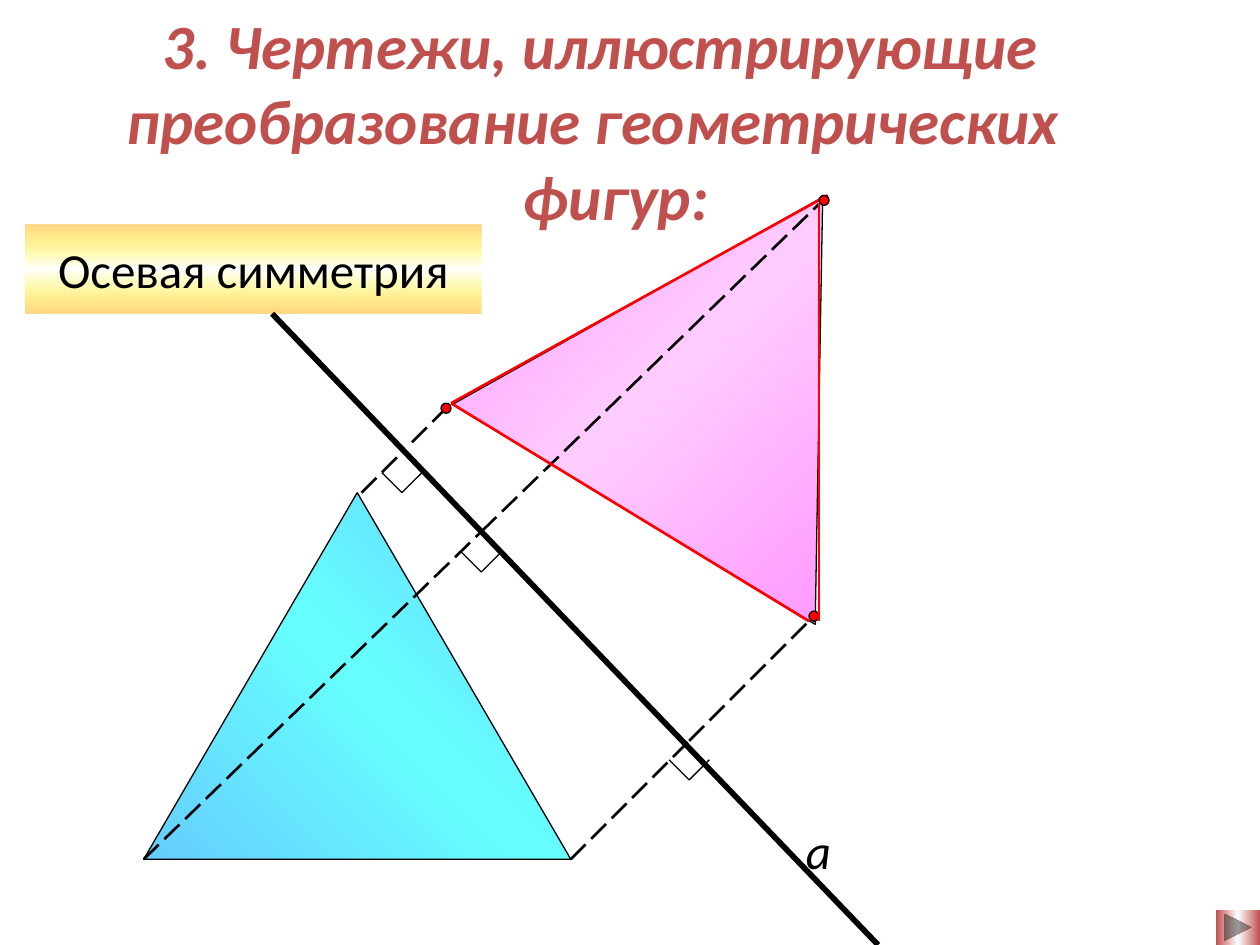
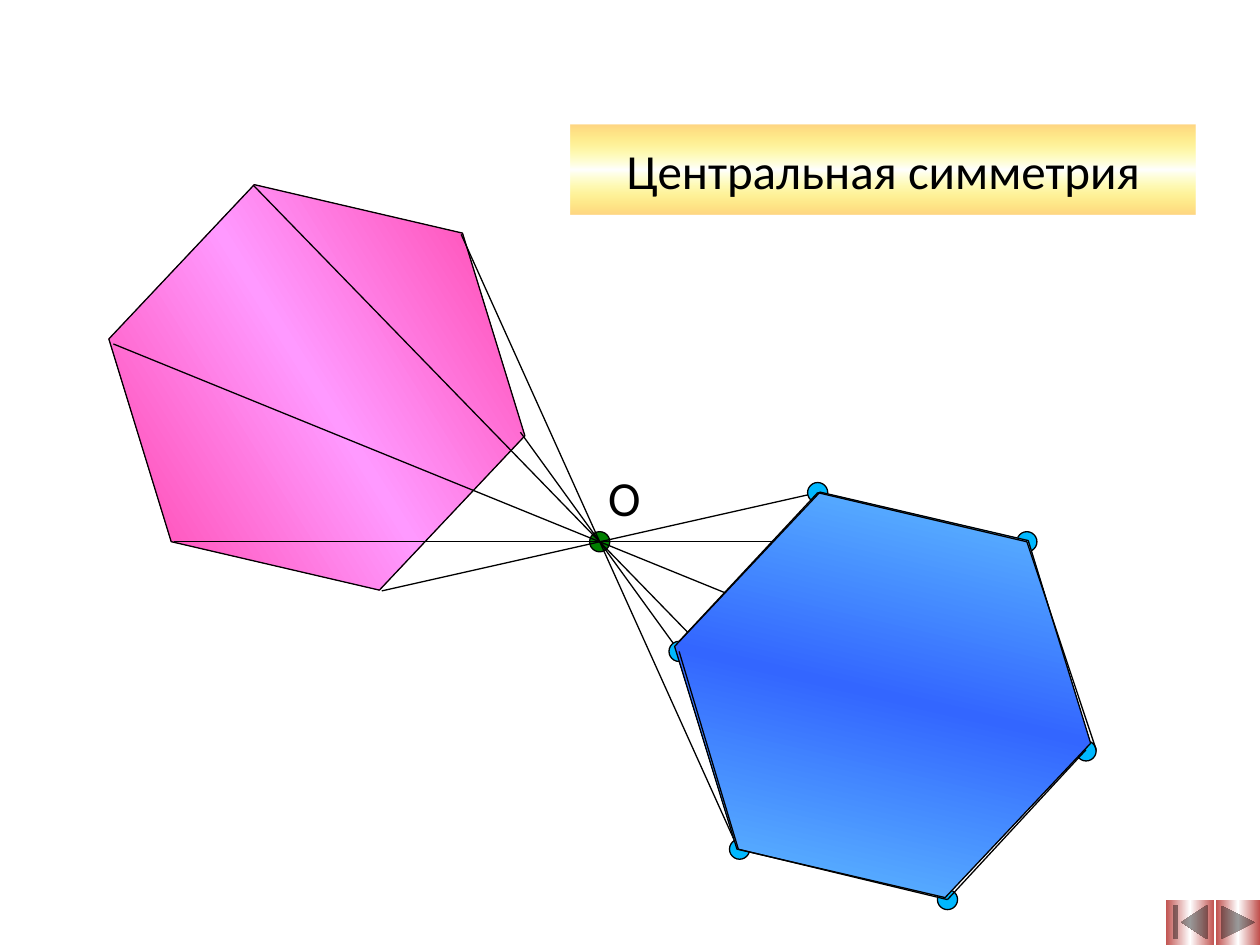
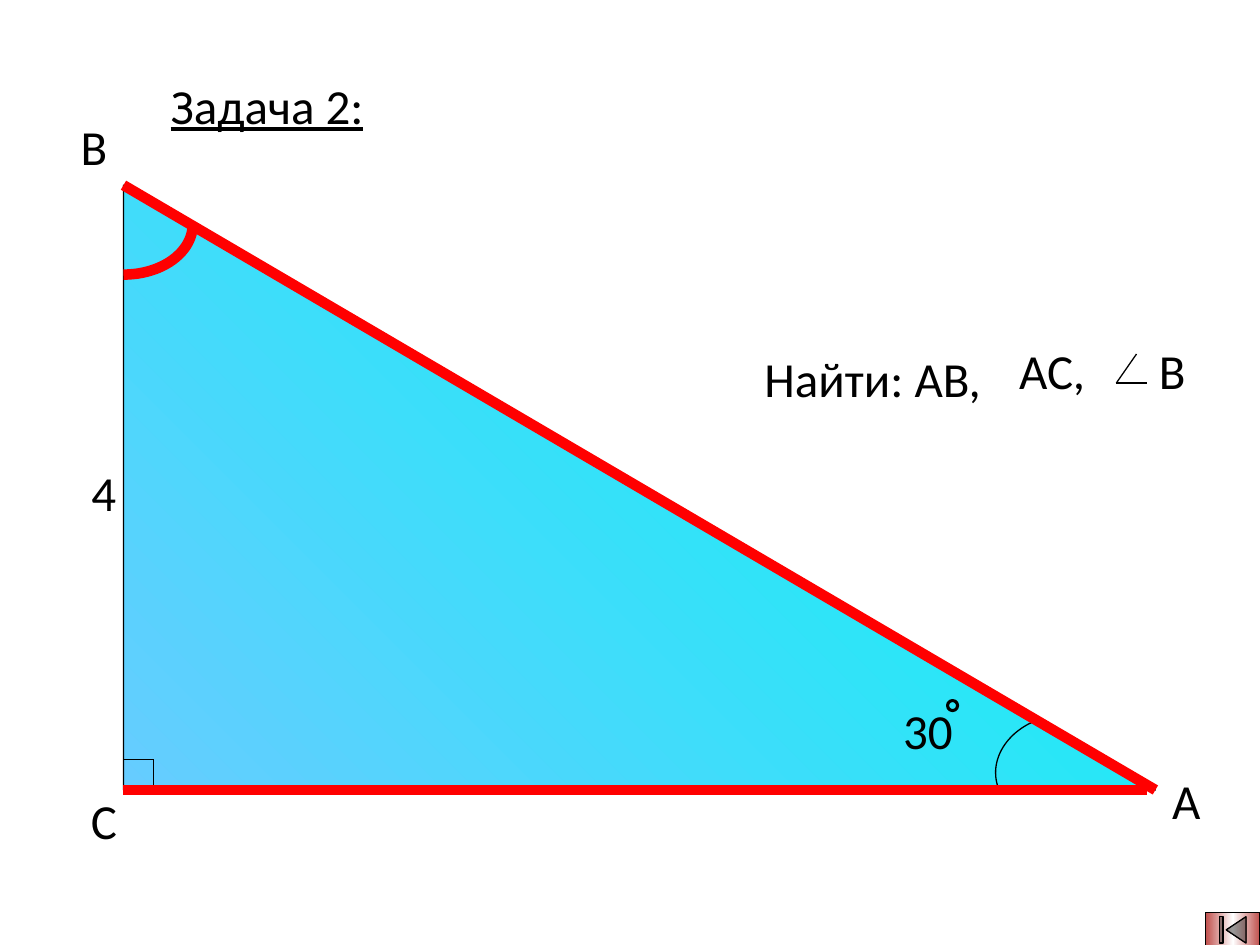
import pptx
import pptx.util
import pptx.dml.color
import pptx.enum.dml
import pptx.enum.shapes
import pptx.enum.text
import pptx.oxml
import pptx.oxml.ns

Inches = pptx.util.Inches
Pt = pptx.util.Pt
RGBColor = pptx.dml.color.RGBColor
SHAPE = pptx.enum.shapes.MSO_SHAPE
ALIGN = pptx.enum.text.PP_ALIGN
ANCHOR = pptx.enum.text.MSO_ANCHOR
AUTO_SIZE = pptx.enum.text.MSO_AUTO_SIZE
DASH = pptx.enum.dml.MSO_LINE.LONG_DASH
qn = pptx.oxml.ns.qn

# Shared style
FONT = "Calibri"
BLACK = RGBColor(0x00, 0x00, 0x00)
WHITE = RGBColor(0xFF, 0xFF, 0xFF)
RED = RGBColor(0xFF, 0x00, 0x00)
BRICK = RGBColor(0xC0, 0x50, 0x4D)
GOLD = RGBColor(0xFF, 0xD6, 0x85)
YELLOW = RGBColor(0xFF, 0xFF, 0x00)
SKY = RGBColor(0x66, 0xCC, 0xFF)
CYAN = RGBColor(0x66, 0xFF, 0xFF)
TURQUOISE = RGBColor(0x00, 0xF8, 0xF2)
BLUE = RGBColor(0x33, 0x66, 0xFF)
DOT_BLUE = RGBColor(0x00, 0xB8, 0xFF)
GREEN = RGBColor(0x00, 0x80, 0x00)
ORCHID = RGBColor(0xFF, 0x99, 0xFF)
PALE_PINK = RGBColor(0xFF, 0xCC, 0xFF)
HOT_PINK = RGBColor(0xFF, 0x33, 0x99)

THIN = 0.75
NEXT = SHAPE.ACTION_BUTTON_FORWARD_OR_NEXT
BEGINNING = SHAPE.ACTION_BUTTON_BEGINNING


def set_gradient(fill, grad_parent, colors, angle, clear_middle=False):
    """Spread the colours evenly; the angle runs counterclockwise."""
    fill.gradient()
    fill.gradient_angle = angle
    stops = grad_parent.find(qn("a:gradFill")).find(qn("a:gsLst"))
    for gs in list(stops):
        stops.remove(gs)
    for i, color in enumerate(colors):
        pos = round(100000 * i / (len(colors) - 1))
        alpha = '<a:alpha val="0"/>' if clear_middle and i == 1 else ""
        stops.append(pptx.oxml.parse_xml(
            f'<a:gs {pptx.oxml.ns.nsdecls("a")} pos="{pos}">'
            f'<a:srgbClr val="{color}">{alpha}</a:srgbClr></a:gs>'))


def set_line(line, color, width):
    if color is None:
        line.fill.background()
    else:
        line.color.rgb = color
        line.width = Pt(width)


def add_figure(s, kind, box, fill=None, angle=0, line=BLACK, width=THIN,
               rotation=0, clear_middle=False):
    """Preset shape; fill is None, one colour or a list of gradient colours."""
    sp = s.shapes.add_shape(kind, *map(Inches, box))
    sp.shadow.inherit = False
    sp.rotation = rotation
    if fill is None:
        sp.fill.background()
    elif isinstance(fill, list):
        set_gradient(sp.fill, sp.element.spPr, fill, angle, clear_middle)
    else:
        sp.fill.solid()
        sp.fill.fore_color.rgb = fill
    set_line(sp.line, line, width)
    return sp


def add_dot(s, center, size, fill):
    x, y = center
    add_figure(s, SHAPE.OVAL, (x - size / 2, y - size / 2, size, size), fill)


def add_segment(s, start, end, color=BLACK, width=THIN, dash=None):
    cx = s.shapes.add_connector(pptx.enum.shapes.MSO_CONNECTOR.STRAIGHT,
                                *map(Inches, (*start, *end)))
    set_line(cx.line, color, width)
    if dash:
        cx.line.dash_style = dash
    cx.element.spPr.append(pptx.oxml.parse_xml(
        f'<a:effectLst {pptx.oxml.ns.nsdecls("a")}/>'))


def add_arc(s, p0, p1, p2, p3, color, width, steps=24):
    """Open outline along the cubic curve with these control points."""
    points = []
    for i in range(steps + 1):
        t = i / steps
        u = 1 - t
        points.append([Inches(u**3 * a + 3 * u * u * t * b + 3 * u * t * t * c + t**3 * d)
                       for a, b, c, d in zip(p0, p1, p2, p3)])
    builder = s.shapes.build_freeform(*points[0])
    builder.add_line_segments(points[1:], close=False)
    sp = builder.convert_to_shape()
    sp.shadow.inherit = False
    sp.fill.background()
    set_line(sp.line, color, width)


def add_run(p, text, size=28, color=BLACK, bold=False, italic=False, underline=False):
    r = p.add_run()
    r.text = text
    r.font.name = FONT
    r.font.size = Pt(size)
    r.font.color.rgb = color
    r.font.bold = bold
    r.font.italic = italic
    r.font.underline = underline


def add_label(s, text, box, grow=False, **style):
    """Unwrapped label: centred, or left-aligned in a box that fits its text."""
    tf = s.shapes.add_textbox(*map(Inches, box)).text_frame
    tf.word_wrap = False
    tf.auto_size = AUTO_SIZE.SHAPE_TO_FIT_TEXT if grow else AUTO_SIZE.NONE
    tf.vertical_anchor = ANCHOR.TOP if grow else ANCHOR.MIDDLE
    p = tf.paragraphs[0]
    p.alignment = ALIGN.LEFT if grow else ALIGN.CENTER
    add_run(p, text, **style)


def add_banner(s, text, box):
    sp = add_figure(s, SHAPE.RECTANGLE, box, [GOLD, YELLOW, GOLD], 270,
                    line=None, clear_middle=True)
    tf = sp.text_frame
    tf.word_wrap = False
    tf.vertical_anchor = ANCHOR.MIDDLE
    p = tf.paragraphs[0]
    p.alignment = ALIGN.CENTER
    add_run(p, text)


def add_title(s, lines, box):
    tf = s.shapes.add_textbox(*map(Inches, box)).text_frame
    tf.word_wrap = True
    tf.auto_size = AUTO_SIZE.SHAPE_TO_FIT_TEXT
    for i, (text, indent) in enumerate(lines):
        p = tf.add_paragraph() if i else tf.paragraphs[0]
        p.alignment = ALIGN.CENTER
        p._p.get_or_add_pPr().set("marL", str(Inches(indent)))
        add_run(p, text, 36, BRICK, bold=True, italic=True)


def add_button(s, kind, box, line=None):
    add_figure(s, kind, box, [BRICK, WHITE, BRICK], line=line)


def build_axial_symmetry(s):
    add_title(s, [("3. Чертежи, иллюстрирующие преобразование геометрических ", 0),
                  ("фигур:", 0.24)], (0, 0, 9.53, 1.9))
    add_banner(s, "Осевая симметрия", (0.2, 1.78, 3.62, 0.71))
    add_figure(s, SHAPE.ISOSCELES_TRIANGLE, (1.14, 3.91, 3.39, 2.91),
               [SKY, CYAN, SKY], 45)
    add_figure(s, SHAPE.ISOSCELES_TRIANGLE, (3.35, 1.78, 3.39, 2.91),
               [ORCHID, PALE_PINK, ORCHID], 45, rotation=271)

    # Axis
    add_segment(s, (2.16, 2.49), (6.97, 7.5), width=3.25)
    add_label(s, "a", (6.18, 6.43, 0.63, 0.63), italic=True)

    # Perpendiculars: vertex, end before the axis, start after it, image
    top, left, right = (3.58, 3.2), (6.5, 1.62), (6.42, 4.93)
    perpendiculars = [((4.53, 6.82), (5.47, 5.88), (5.47, 5.88), right),
                      ((1.14, 6.82), (3.82, 4.22), (3.82, 4.22), left),
                      ((2.87, 3.91), (3.19, 3.59), (3.27, 3.51), top)]
    for vertex, before, after, image in perpendiculars:
        add_segment(s, vertex, before, width=1.5, dash=DASH)
        add_segment(s, after, image, width=1.5, dash=DASH)

    # Right angle marks
    for x, y in [(3.19, 3.91), (3.82, 4.54), (5.47, 6.19)]:
        for dx in (0.16, -0.16):
            add_segment(s, (x + dx, y - 0.16), (x, y))

    # Reflected triangle
    add_segment(s, top, (6.57, 1.55), RED, 1.5)
    for center in [(3.54, 3.24), (6.54, 1.59), (6.46, 4.89)]:
        add_dot(s, center, 0.08, RED)
    add_segment(s, top, right, RED, 1.5)
    add_segment(s, left, (6.5, 4.93), RED, 1.5)
    add_button(s, NEXT, (9.65, 7.22, 0.35, 0.28))


def build_central_symmetry(s):
    add_banner(s, "Центральная симметрия", (4.53, 0.99, 4.96, 0.71))
    hexagon = add_figure(s, SHAPE.HEXAGON, (0.82, 1.62, 3.39, 2.91),
                         [HOT_PINK, ORCHID, HOT_PINK], 45, rotation=13.1)
    hexagon.adjustments[0] = 0.291

    # Centre and the rays through it
    center = (4.76, 4.3)
    add_dot(s, center, 0.16, GREEN)
    add_label(s, "О", (4.68, 3.75, 0.55, 0.39))
    vertices = [(4.13, 3.43), (3.03, 4.69), (3.66, 1.86),
                (1.38, 4.3), (0.9, 2.73), (2.01, 1.47)]
    for vertex in vertices:
        image = [2 * c - v for c, v in zip(center, vertex)]
        add_segment(s, vertex, center)
        add_segment(s, center, image)
    for dot in [(6.49, 3.91), (5.87, 6.74), (7.52, 7.14),
                (8.15, 4.3), (8.62, 5.96), (5.39, 5.17)]:
        add_dot(s, dot, 0.16, DOT_BLUE)

    # Image hexagon and its sides
    hexagon = add_figure(s, SHAPE.HEXAGON, (5.31, 4.06, 3.39, 2.91),
                         [SKY, BLUE, SKY], 270, rotation=13.1)
    hexagon.adjustments[0] = 0.291
    for outline in [[(5.39, 5.09), (6.49, 3.91), (8.15, 4.3), (8.7, 5.95)],
                    [(8.62, 5.95), (7.52, 7.14), (5.86, 6.74), (5.39, 5.17)]]:
        for start, end in zip(outline, outline[1:]):
            add_segment(s, start, end)
    add_button(s, BEGINNING, (9.25, 7.14, 0.39, 0.36))
    add_button(s, NEXT, (9.65, 7.14, 0.35, 0.36))


def build_triangle_task(s):
    add_label(s, "Задача 2:", (0.35, 0.36, 3.54, 0.94), underline=True)
    b, c, a = (0.98, 1.47), (0.98, 6.27), (9.17, 6.27)
    add_figure(s, SHAPE.RIGHT_TRIANGLE, (0.98, 1.47, 8.19, 4.8), [SKY, TURQUOISE], 45)
    for text, x, y in [("C", 0.51, 6.19), ("B", 0.43, 0.84), ("A", 9.1, 6.03),
                       ("4", 0.51, 3.59), ("30", 7.05, 5.48)]:
        add_label(s, text, (x, y, 0.63, 0.63))

    # Degree sign, angle A and the right angle
    add_figure(s, SHAPE.OVAL, (7.52, 5.56, 0.08, 0.08), width=1.75)
    add_arc(s, (8.22, 5.72), (7.97, 5.82), (7.84, 6.06), (7.93, 6.27), BLACK, THIN)
    add_segment(s, (0.98, 6.03), (1.22, 6.03))
    add_segment(s, (1.22, 6.03), (1.22, 6.27))

    # What to find
    add_label(s, "Найти: AB, ", (5.63, 2.49, 2.68, 1.02))
    add_segment(s, (9.02, 2.81), (8.86, 3.04))
    add_segment(s, (8.86, 3.04), (9.1, 3.04))
    add_label(s, "B", (9.1, 2.65, 0.46, 0.57), grow=True)
    add_label(s, "AC,", (7.99, 2.65, 0.85, 0.57), grow=True)

    # Sought sides and angle B
    add_segment(s, b, a, RED, 6)
    add_segment(s, c, (9.1, 6.27), RED, 6)
    add_arc(s, (0.98, 2.18), (1.29, 2.18), (1.53, 2), (1.53, 1.78), RED, 6)
    add_button(s, BEGINNING, (9.57, 7.24, 0.43, 0.28), line=BLACK)


def main():
    prs = pptx.Presentation()
    prs.slide_width, prs.slide_height = Inches(10), Inches(7.5)
    for build in (build_axial_symmetry, build_central_symmetry, build_triangle_task):
        build(prs.slides.add_slide(prs.slide_layouts[6]))
    prs.save("out.pptx")


if __name__ == "__main__":
    main()
